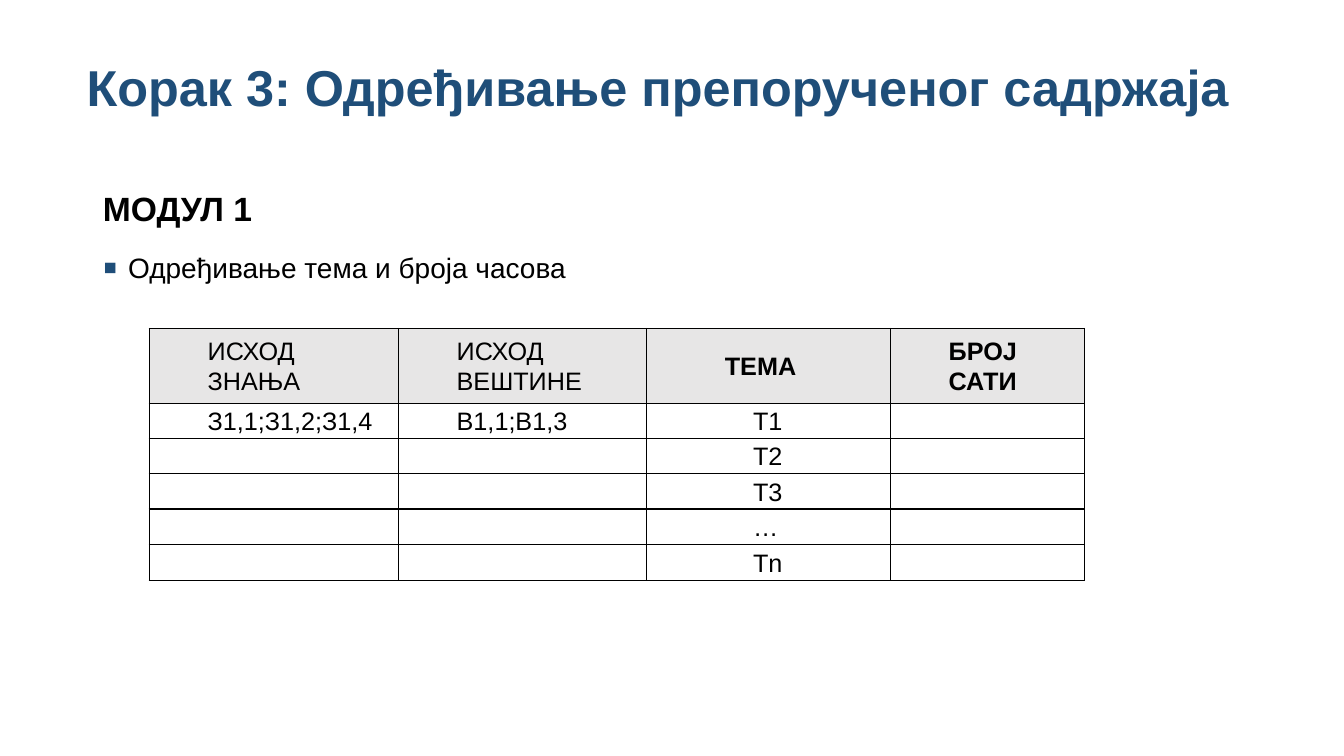
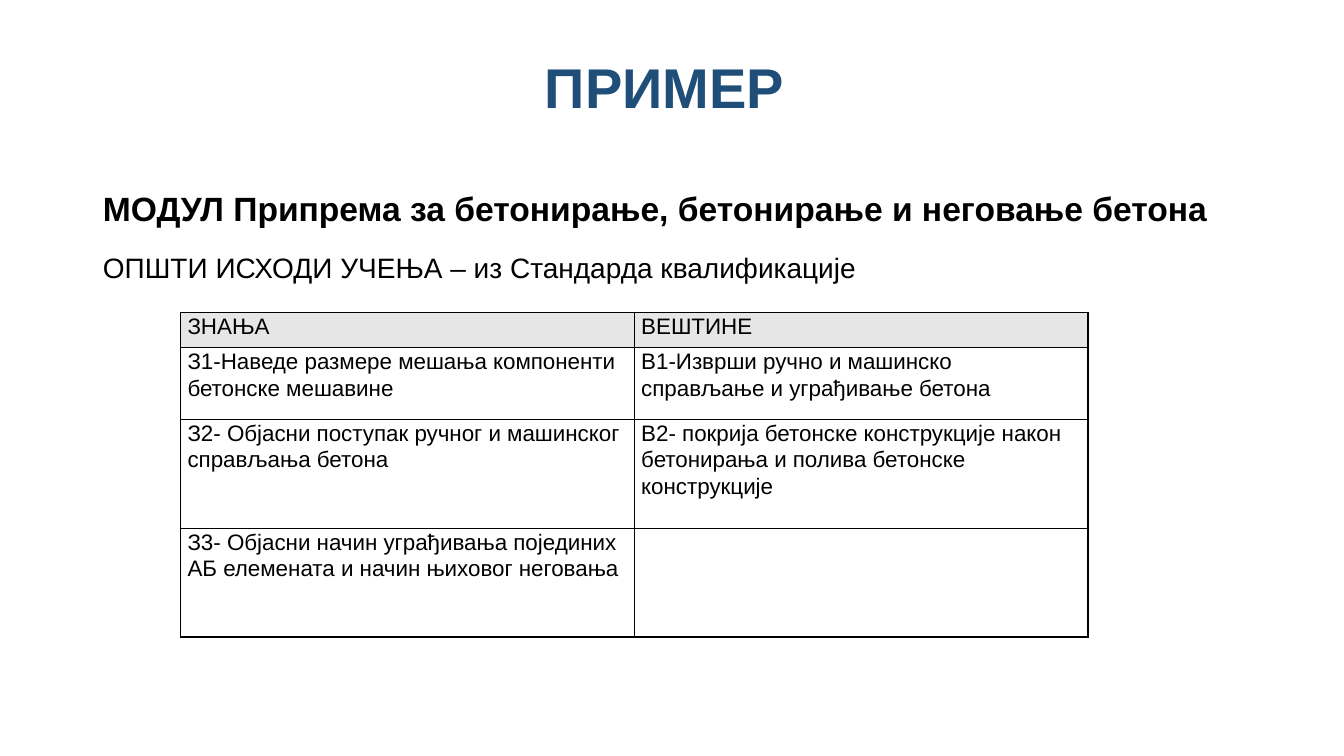
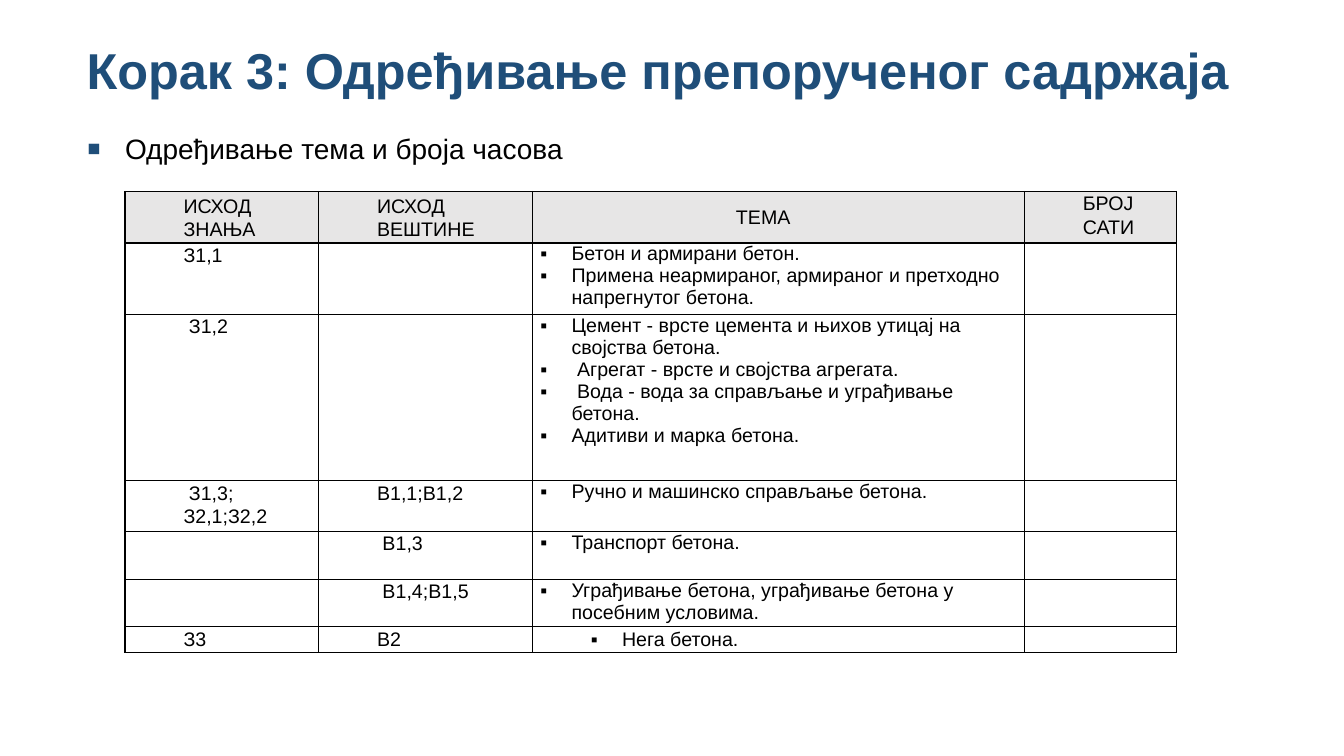
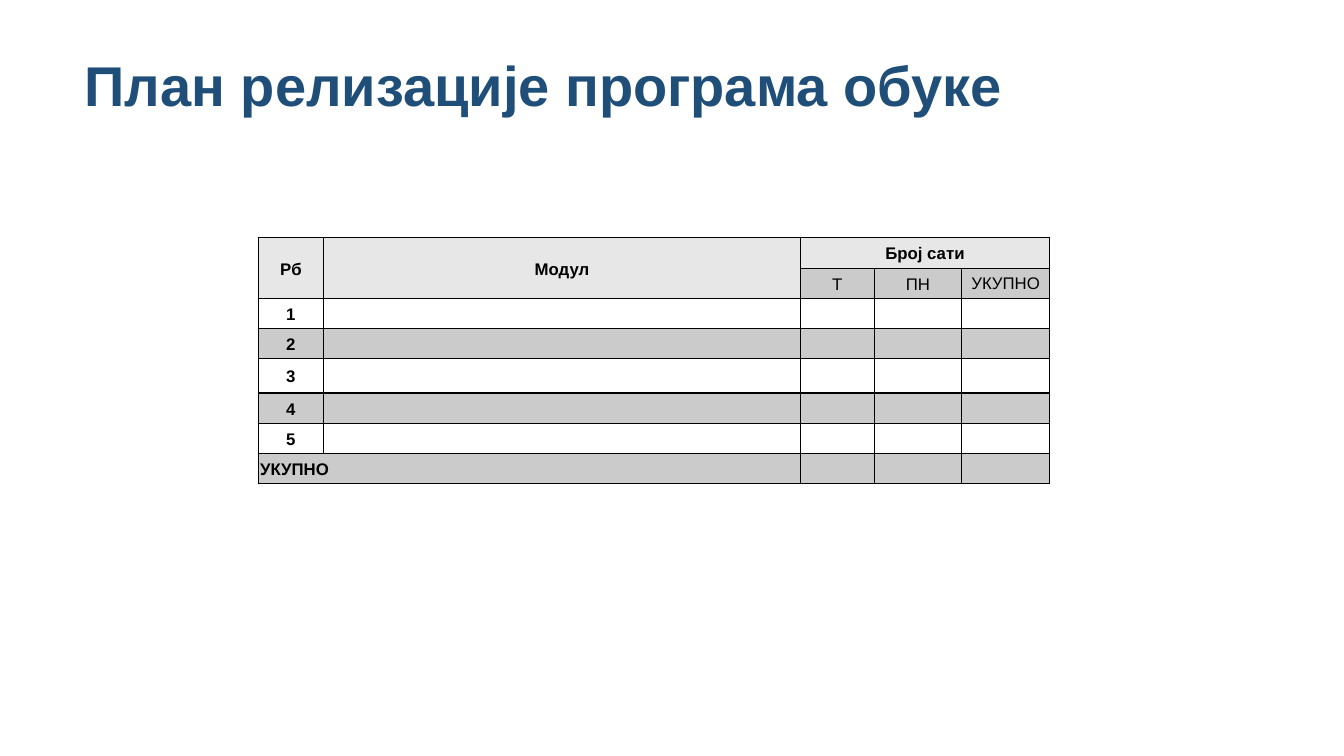
from lxml.etree import SubElement
from pptx import Presentation
from pptx.dml.color import RGBColor
from pptx.enum.text import MSO_ANCHOR, MSO_AUTO_SIZE, PP_ALIGN
from pptx.oxml.ns import qn
from pptx.util import Pt

PX = 9144  # 100 px to the inch
FONT = "Arial"
COLORS = {
    "title": "1F4E79",
    "text": "000000",
    "border": "000000",
    "header": "E7E6E6",
    "plan_header": "E7E7E7",
    "band": "CBCBCB",
    "white": "FFFFFF",
}
TITLE_AND_BODY, TITLE_ONLY = 1, 5
STEP_TITLE = "Корак 3: Одређивање препорученог садржаја"
TOPICS_LINE = "Одређивање тема и броја часова"


def px(length):
    return int(length * PX)


def rgb(name):
    return RGBColor.from_string(COLORS[name])


def set_bullet(properties, bullet_color, bullet_size):
    if bullet_color:
        color = SubElement(properties, qn("a:buClr"))
        SubElement(color, qn("a:srgbClr"), val=COLORS[bullet_color])
    SubElement(properties, qn("a:buSzPct"), val=str(bullet_size * 1000))
    SubElement(properties, qn("a:buFont"), typeface=FONT)
    SubElement(properties, qn("a:buChar"), char="▪")


def write(paragraph, text, size=18, bold=False, color="text", align=PP_ALIGN.LEFT,
          spacing=1.0, before=0, after=0, indent=0, hang=0, bullet=False,
          bullet_color=None, bullet_size=100):
    """Fill one paragraph; an empty text still takes the font size."""
    properties = paragraph._p.get_or_add_pPr()
    properties.set("marL", str(px(indent)))
    properties.set("indent", str(px(-hang)))
    if bullet:
        set_bullet(properties, bullet_color, bullet_size)
    else:
        SubElement(properties, qn("a:buNone"))
    paragraph.alignment = align
    paragraph.line_spacing = spacing
    paragraph.space_before, paragraph.space_after = Pt(before), Pt(after)
    if not text:
        SubElement(paragraph._p, qn("a:endParaRPr"), sz=str(size * 100))
        return
    run = paragraph.add_run()
    run.text = text
    run.font.name, run.font.size, run.font.bold = FONT, Pt(size), bold
    run.font.color.rgb = rgb(color)


def place(placeholder, left, top, width, height, anchor):
    placeholder.left, placeholder.top = px(left), px(top)
    placeholder.width, placeholder.height = px(width), px(height)
    frame = placeholder.text_frame
    frame.word_wrap = True
    frame.auto_size = MSO_AUTO_SIZE.NONE
    frame.vertical_anchor = anchor
    return frame


def add_slide(deck, layout, title, box, size=36, align=PP_ALIGN.LEFT):
    slide = deck.slides.add_slide(deck.slide_layouts[layout])
    frame = place(slide.shapes.title, *box, MSO_ANCHOR.MIDDLE)
    write(frame.paragraphs[0], title, size=size, bold=True, color="title",
          align=align, spacing=0.9)
    return slide


def fill_body(slide, box, lines):
    """Write (text, format) pairs into the body placeholder."""
    frame = place(slide.placeholders[1], *box, MSO_ANCHOR.TOP)
    for number, (text, style) in enumerate(lines):
        paragraph = frame.add_paragraph() if number else frame.paragraphs[0]
        write(paragraph, text, **style)


def fill_module_body(slide, module, line, **line_style):
    fill_body(slide, (92, 179, 1150, 476), [
        (module, dict(size=24, bold=True, spacing=1.07, after=8)),
        (line, dict(size=20, spacing=0.9, before=10, **line_style)),
    ])


def set_borders(cell):
    properties = cell._tc.get_or_add_tcPr()
    for side in ("lnL", "lnR", "lnT", "lnB"):
        line = SubElement(properties, qn(f"a:{side}"), w=str(Pt(1)))
        solid = SubElement(line, qn("a:solidFill"))
        SubElement(solid, qn("a:srgbClr"), val=COLORS["border"])


def format_cell(cell, content, inset, fill=None, anchor=MSO_ANCHOR.TOP, **style):
    """Content is one text, or a list of texts for several paragraphs."""
    set_borders(cell)
    if fill:
        cell.fill.solid()
        cell.fill.fore_color.rgb = rgb(fill)
    else:
        cell.fill.background()
    cell.margin_left = cell.margin_right = px(inset)
    cell.margin_top = cell.margin_bottom = 0
    cell.vertical_anchor = anchor
    texts = content if isinstance(content, list) else [content]
    for number, text in enumerate(texts):
        frame = cell.text_frame
        paragraph = frame.add_paragraph() if number else frame.paragraphs[0]
        write(paragraph, text, **style)


def add_grid(slide, left, top, widths, heights, rows, look, inset=8, merges=()):
    """Draw a table; look(row, column) gives the format of each cell."""
    table = slide.shapes.add_table(
        len(heights), len(widths), px(left), px(top),
        px(sum(widths)), px(sum(heights))).table
    table.first_row = table.horz_banding = False
    for column, width in zip(table.columns, widths):
        column.width = px(width)
    for row, height in zip(table.rows, heights):
        row.height = px(height)
    for r, row in enumerate(rows):
        for c, content in enumerate(row):
            format_cell(table.cell(r, c), content, inset, **look(r, c))
    for first, last in merges:
        table.cell(*first).merge(table.cell(*last))


def module_look(row, column):
    header = row == 0
    indent = 50
    if column == 2:
        indent = 70 if header else 98
    return dict(size=18, spacing=1.07, indent=indent, anchor=MSO_ANCHOR.MIDDLE,
                bold=header and column >= 2, fill="header" if header else None)


def outcomes_look(row, column):
    return dict(size=16, spacing=1.07, fill=None if row else "header")


def topics_look(row, column):
    style = dict(size=14, spacing=1.07, indent=50)
    if row == 0:
        style.update(fill="header")
        if column < 3:
            style.update(anchor=MSO_ANCHOR.MIDDLE)
        if column == 2:
            style.update(indent=194)
    elif column == 2:
        last = row == 6
        style.update(bullet=True, hang=31, indent=81 if last else 31,
                     spacing=1.07 if last else 1.0)
    return style


def plan_look(row, column):
    subheader = row == 1 and column >= 2
    total = row == 7
    if row == 0 or (row == 1 and not subheader):
        fill = "plan_header"
    else:
        fill = "band" if row % 2 else "white"
    return dict(size=12, bold=not subheader, fill=fill, anchor=MSO_ANCHOR.MIDDLE,
                align=PP_ALIGN.LEFT if total else PP_ALIGN.CENTER,
                spacing=1.07 if subheader and column == 4 else Pt(15))


def add_module_slide(deck):
    slide = add_slide(deck, TITLE_AND_BODY, STEP_TITLE, (76, 40, 1188, 99))
    fill_module_body(slide, "МОДУЛ 1", TOPICS_LINE, indent=25, hang=25,
                     bullet=True, bullet_color="title", bullet_size=150)
    rows = [["ИСХОД ЗНАЊА", "ИСХОД ВЕШТИНЕ", "ТЕМА", "БРОЈ САТИ"],
            ["З1,1;З1,2;З1,4", "В1,1;В1,3", "T1", ""]]
    rows += [["", "", topic, ""] for topic in ("T2", "T3", "…", "Tn")]
    add_grid(slide, 148, 326, [247, 246, 242, 193], [74, 35, 35, 35, 35, 36],
             rows, module_look)


def add_example_slide(deck):
    slide = add_slide(deck, TITLE_AND_BODY, "ПРИМЕР", (76, 40, 1166, 99),
                      size=40, align=PP_ALIGN.CENTER)
    fill_module_body(slide,
                     "МОДУЛ Припрема за бетонирање, бетонирање и неговање бетона",
                     "ОПШТИ ИСХОДИ УЧЕЊА – из Стандарда квалификације")
    rows = [
        ["ЗНАЊА", "ВЕШТИНЕ"],
        ["З1-Наведе размере мешања компоненти бетонске мешавине",
         "В1-Изврши ручно и машинско справљање и уграђивање бетона"],
        ["З2- Објасни поступак ручног и машинског справљања бетона",
         "В2- покрија бетонске конструкције након бетонирања и полива "
         "бетонске конструкције"],
        ["З3- Објасни начин уграђивања појединих АБ елемената и начин "
         "њиховог неговања", ""],
    ]
    add_grid(slide, 179, 310, [450, 450], [35, 71, 108, 108], rows,
             outcomes_look, inset=7)


def add_topics_slide(deck):
    slide = add_slide(deck, TITLE_AND_BODY, STEP_TITLE, (76, 40, 1188, 65))
    fill_body(slide, (76, 125, 666, 44), [
        (TOPICS_LINE, dict(size=20, indent=38, hang=38, bullet=True,
                           bullet_color="title", bullet_size=150)),
    ])
    rows = [
        ["ИСХОД ЗНАЊА", "ИСХОД ВЕШТИНЕ", "ТЕМА", "БРОЈ САТИ"],
        ["З1,1", "", ["Бетон и армирани бетон.",
                      "Примена неармираног, армираног и претходно "
                      "напрегнутог бетона."], ""],
        [" З1,2", "", ["Цемент - врсте цемента и њихов утицај на својства бетона.",
                       " Агрегат - врсте и својства агрегата.",
                       " Вода - вода за справљање и уграђивање бетона.",
                       "Адитиви и марка бетона."], ""],
        [" З1,3; З2,1;З2,2", "В1,1;В1,2", "Ручно и машинско справљање бетона.", ""],
        ["", " В1,3", "Транспорт бетона.", ""],
        ["", " В1,4;В1,5",
         "Уграђивање бетона, уграђивање бетона у посебним условима.", ""],
        ["З3", "В2", "Нега бетона.", ""],
    ]
    add_grid(slide, 124, 190, [192, 212, 488, 151], [51, 71, 165, 50, 48, 47, 25],
             rows, topics_look)


def add_plan_slide(deck):
    slide = add_slide(deck, TITLE_ONLY, "План релизације програма обуке",
                      (74, 43, 1150, 90), size=40)
    rows = [["Рб", "Модул", "Број сати", "", ""],
            ["", "", "Т", "ПН", "УКУПНО"]]
    rows += [[str(number), "", "", "", ""] for number in range(1, 6)]
    rows.append(["УКУПНО", "", "", "", ""])
    add_grid(slide, 256, 236, [65, 473, 73, 87, 87],
             [30, 30, 30, 30, 34, 30, 30, 30], rows, plan_look, inset=2,
             merges=[((0, 0), (1, 0)), ((0, 1), (1, 1)),
                     ((0, 2), (0, 4)), ((7, 0), (7, 1))])


def main():
    deck = Presentation()
    deck.slide_width, deck.slide_height = px(1333), px(750)
    add_module_slide(deck)
    add_example_slide(deck)
    add_topics_slide(deck)
    add_plan_slide(deck)
    deck.save("out.pptx")


if __name__ == "__main__":
    main()
